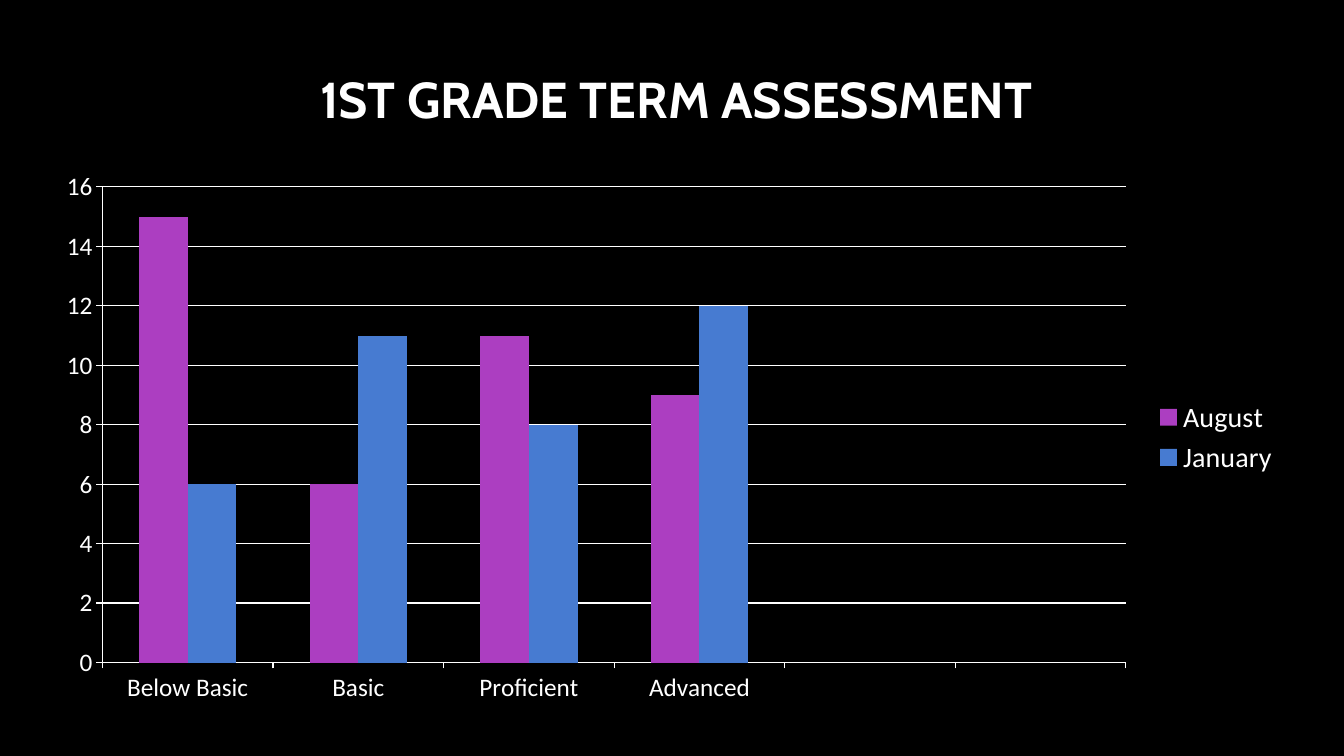
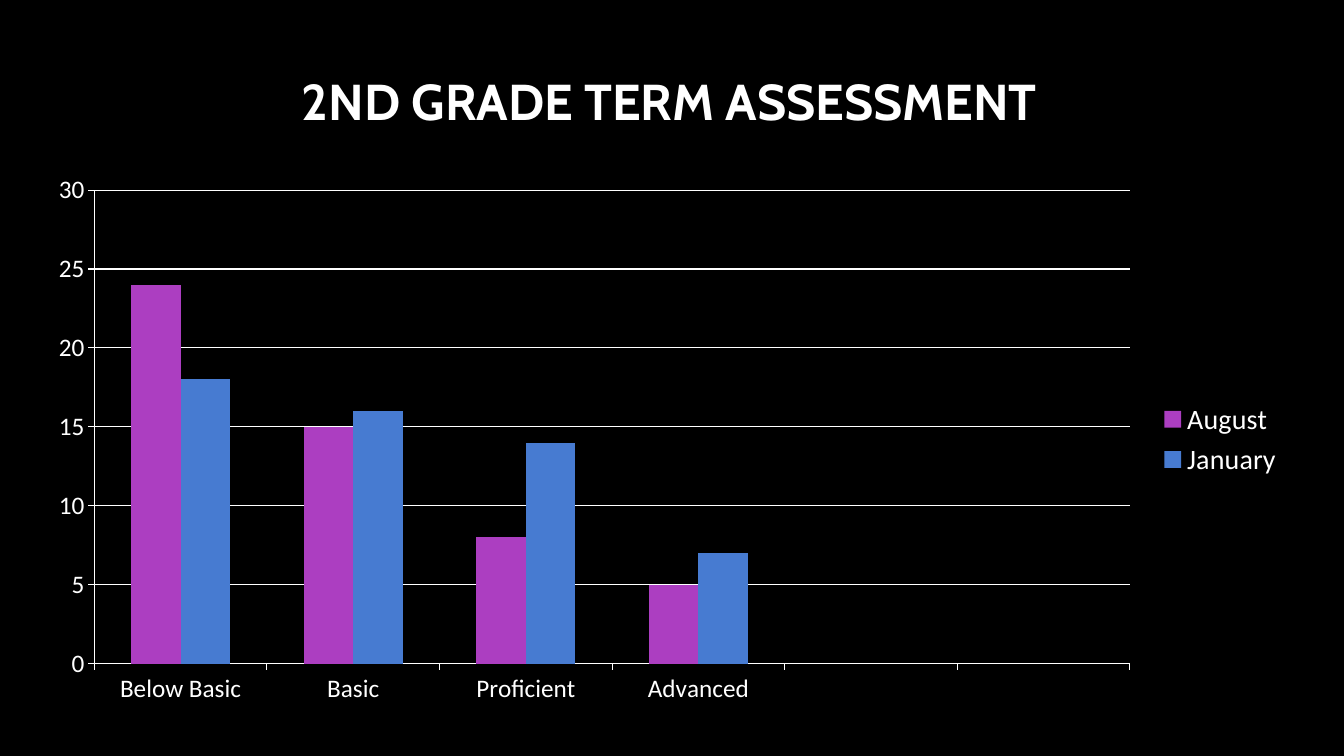
from dataclasses import dataclass

from pptx import Presentation
from pptx.chart.axis import CategoryAxis, ValueAxis
from pptx.chart.data import CategoryChartData
from pptx.dml.color import RGBColor
from pptx.enum.chart import XL_CHART_TYPE, XL_LEGEND_POSITION, XL_TICK_MARK
from pptx.enum.text import MSO_ANCHOR, PP_ALIGN
from pptx.slide import Slide
from pptx.util import Emu, Pt

EMU_PER_PX = 9525
SLIDE_WIDTH, SLIDE_HEIGHT = 1280, 720
CATEGORIES = ("Below Basic", "Basic", "Proficient", "Advanced", "", "")


@dataclass(frozen=True)
class Theme:
    """Colours, fonts and type sizes shared by the slides."""

    background: RGBColor = RGBColor(0x00, 0x00, 0x00)
    foreground: RGBColor = RGBColor(0xFF, 0xFF, 0xFF)
    august: RGBColor = RGBColor(0xAC, 0x3E, 0xC1)
    january: RGBColor = RGBColor(0x47, 0x7B, 0xD1)
    title_font: str = "Cabin"
    chart_font: str = "Calibri"
    title_size: Pt = Pt(36)
    axis_size: Pt = Pt(18)
    legend_size: Pt = Pt(20)
    line_width: Pt = Pt(0.75)


@dataclass(frozen=True)
class Frame:
    """A rectangle in px."""

    left: int
    top: int
    width: int
    height: int

    def emu(self) -> tuple[Emu, Emu, Emu, Emu]:
        """Return the rectangle in EMU."""
        return px(self.left), px(self.top), px(self.width), px(self.height)


@dataclass(frozen=True)
class Assessment:
    """One grade's results and their placement."""

    title: str
    title_frame: Frame
    chart_frame: Frame
    august: tuple[int, ...]
    january: tuple[int, ...]
    axis_maximum: int
    axis_step: int


THEME = Theme()
ASSESSMENTS = (
    Assessment(
        "1ST GRADE TERM ASSESSMENT",
        Frame(50, 34, 1188, 120),
        Frame(40, 153, 1188, 527),
        (15, 6, 11, 9),
        (6, 11, 8, 12),
        16,
        2,
    ),
    Assessment(
        "2ND GRADE TERM ASSESSMENT",
        Frame(32, 36, 1211, 120),
        Frame(32, 156, 1200, 525),
        (24, 15, 8, 5),
        (18, 16, 14, 7),
        30,
        5,
    ),
)


def px(length: int) -> Emu:
    """Convert px to EMU."""
    return Emu(length * EMU_PER_PX)


def add_title(slide: Slide, text: str, frame: Frame) -> None:
    """Add the centred slide title."""
    box = slide.shapes.add_textbox(*frame.emu())
    box.text_frame.word_wrap = True
    box.text_frame.vertical_anchor = MSO_ANCHOR.MIDDLE
    para = box.text_frame.paragraphs[0]
    para.text = text
    para.alignment = PP_ALIGN.CENTER
    font = para.runs[0].font
    font.name = THEME.title_font
    font.size = THEME.title_size
    font.bold = True
    font.color.rgb = THEME.foreground


def style_axis(axis: CategoryAxis | ValueAxis) -> None:
    """Give an axis its line, ticks and label size."""
    axis.major_tick_mark = XL_TICK_MARK.OUTSIDE
    axis.minor_tick_mark = XL_TICK_MARK.NONE
    axis.format.line.color.rgb = THEME.foreground
    axis.format.line.width = THEME.line_width
    axis.tick_labels.font.size = THEME.axis_size


def add_results_chart(slide: Slide, assessment: Assessment) -> None:
    """Add the clustered columns comparing both months."""
    data = CategoryChartData()
    data.categories = CATEGORIES
    blanks = (None,) * (len(CATEGORIES) - len(assessment.august))
    data.add_series("August", assessment.august + blanks)
    data.add_series("January", assessment.january + blanks)
    chart = slide.shapes.add_chart(
        XL_CHART_TYPE.COLUMN_CLUSTERED, *assessment.chart_frame.emu(), data
    ).chart
    chart.has_title = False
    chart.font.name = THEME.chart_font
    chart.font.size = THEME.axis_size
    chart.font.color.rgb = THEME.foreground

    style_axis(chart.category_axis)
    value_axis = chart.value_axis
    style_axis(value_axis)
    value_axis.minimum_scale = 0
    value_axis.maximum_scale = assessment.axis_maximum
    value_axis.major_unit = assessment.axis_step
    value_axis.has_major_gridlines = True
    gridline = value_axis.major_gridlines.format.line
    gridline.color.rgb = THEME.foreground
    gridline.width = THEME.line_width

    plot = chart.plots[0]
    plot.vary_by_categories = False
    plot.gap_width = 150
    plot.overlap = 0
    for series, colour in zip(plot.series, (THEME.august, THEME.january)):
        series.format.fill.solid()
        series.format.fill.fore_color.rgb = colour

    chart.has_legend = True
    chart.legend.position = XL_LEGEND_POSITION.RIGHT
    chart.legend.include_in_layout = False
    chart.legend.font.size = THEME.legend_size
    chart.legend.font.name = THEME.chart_font
    chart.legend.font.color.rgb = THEME.foreground


def main() -> None:
    """Build and save the deck."""
    deck = Presentation()
    deck.slide_width, deck.slide_height = px(SLIDE_WIDTH), px(SLIDE_HEIGHT)
    for assessment in ASSESSMENTS:
        slide = deck.slides.add_slide(deck.slide_layouts[6])
        slide.background.fill.solid()
        slide.background.fill.fore_color.rgb = THEME.background
        add_title(slide, assessment.title, assessment.title_frame)
        add_results_chart(slide, assessment)
    deck.save("out.pptx")


if __name__ == "__main__":
    main()
